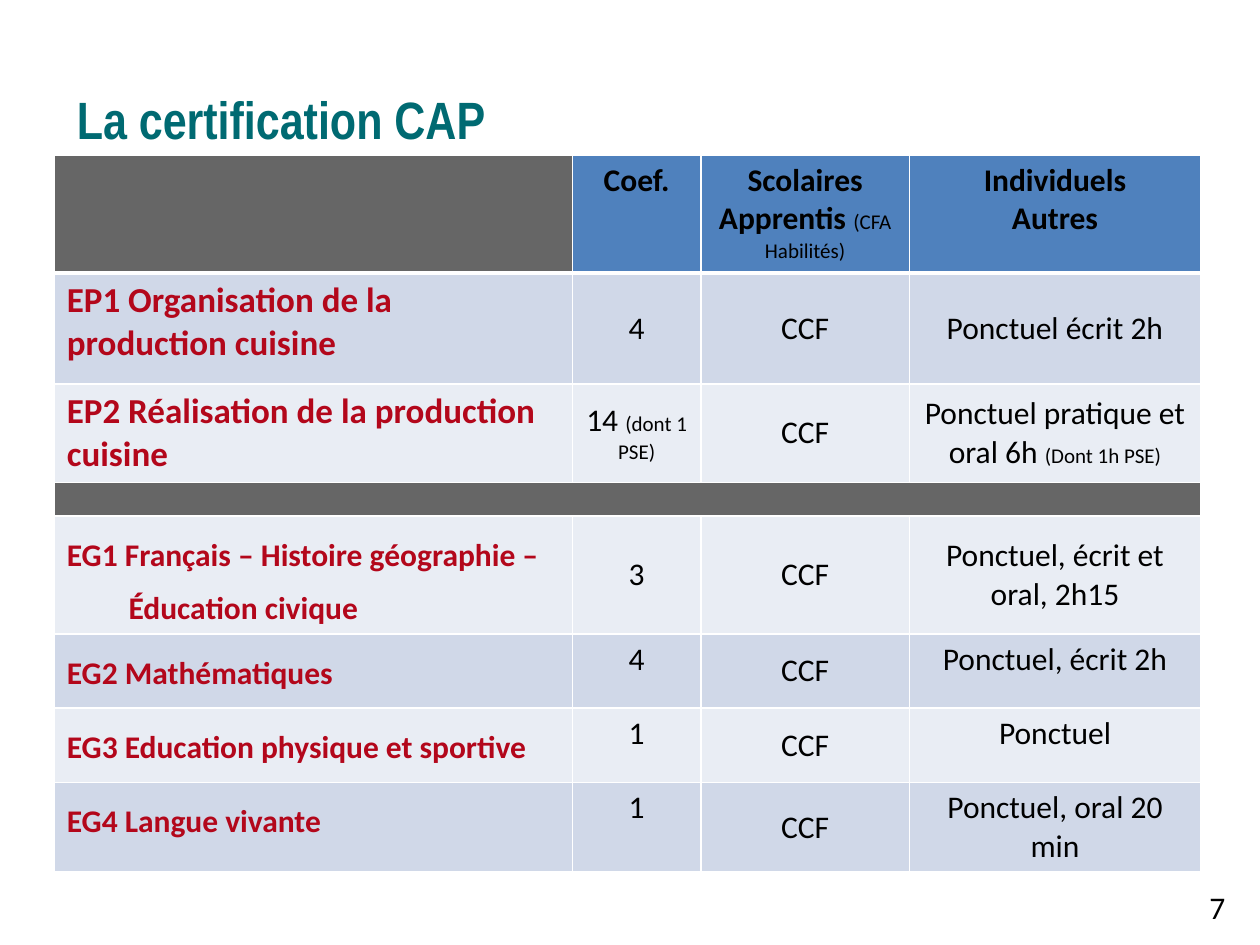
from pptx import Presentation
from pptx.dml.color import RGBColor
from pptx.enum.text import MSO_ANCHOR, MSO_AUTO_SIZE, PP_ALIGN
from pptx.util import Pt
from lxml import etree

LEFT, CENTER = PP_ALIGN.LEFT, PP_ALIGN.CENTER
TOP, MIDDLE = MSO_ANCHOR.TOP, MSO_ANCHOR.MIDDLE
NO_FIT = MSO_AUTO_SIZE.NONE
NS = "http://schemas.openxmlformats.org/drawingml/2006/main"
RED, BLACK, GREY, BLUE = "B3071B", "000000", "666666", "4F81BD"
BANDS = ["E9EDF4", "D0D8E8"]


def style(font, size, color, bold=False, name="Calibri"):
    font.name, font.size, font.bold = name, Pt(size), bold
    font.color.rgb = RGBColor.from_string(color)


def edge(cell, side, width):
    line = etree.SubElement(cell._tc.get_or_add_tcPr(), f"{{{NS}}}ln{side}", w=str(Pt(width)))
    fill = etree.SubElement(line, f"{{{NS}}}solidFill")
    etree.SubElement(fill, f"{{{NS}}}srgbClr", val="FFFFFF")


deck = Presentation()
deck.slide_width, deck.slide_height = Pt(720), Pt(540)
slide = deck.slides.add_slide(deck.slide_layouts[5])

# Title
title = slide.shapes.title
title.left, title.top, title.width, title.height = Pt(36.7), Pt(43.2), Pt(648), Pt(51.8)
frame = title.text_frame
frame.text = "La certification CAP"
frame.auto_size, frame.word_wrap = NO_FIT, True
frame.vertical_anchor = MIDDLE
frame.margin_left = frame.margin_right = Pt(7.2)
frame.margin_top = frame.margin_bottom = 0
para = frame.paragraphs[0]
para.alignment, para.line_spacing = LEFT, Pt(33)
style(para.font, 30, "006A72", True, "Arial Narrow")

# Exam table: a new line starts a paragraph, "|" starts small print
rows = [
    ["", "Coef.", "Scolaires\nApprentis |(CFA Habilités)", "Individuels\nAutres"],
    ["EP1 Organisation de la production cuisine", "4", "CCF", "Ponctuel écrit 2h"],
    ["EP2 Réalisation de la production cuisine", "14 |(dont 1 PSE)", "CCF",
     "Ponctuel pratique et oral 6h |(Dont 1h PSE)"],
    ["", "", "", ""],
    ["EG1 Français – Histoire géographie – Éducation civique", "3", "CCF",
     "Ponctuel, écrit et oral, 2h15"],
    ["EG2 Mathématiques", "4", "CCF", "Ponctuel, écrit 2h"],
    ["EG3 Education physique et sportive", "1", "CCF", "Ponctuel"],
    ["EG4 Langue vivante", "1", "CCF", "Ponctuel, oral 20 min"],
]
widths = [296, 73.6, 119, 166.6]
heights = [67.4, 63.4, 56.2, 19.4, 60.5, 42.5, 42.5, 42.5]
table = slide.shapes.add_table(len(rows), len(widths), Pt(31), Pt(88.6),
                               Pt(sum(widths)), Pt(sum(heights))).table
for col, width in zip(table.columns, widths):
    col.width = Pt(width)
for row, height in zip(table.rows, heights):
    row.height = Pt(height)

for r, texts in enumerate(rows):
    for c, text in enumerate(texts):
        cell = table.cell(r, c)
        for side in "LRTB":
            edge(cell, side, 3 if r == 0 and side == "B" else 1)
        if r == 3 or r == c == 0:
            color = GREY
        else:
            color = BLUE if r == 0 else BANDS[r % 2]
        cell.fill.solid()
        cell.fill.fore_color.rgb = RGBColor.from_string(color)

        # Marks sit at the top in the last three rows, but for the CCF column
        centred = r > 0 and c > 0 and (r < 5 or c == 2)
        cell.vertical_anchor = MIDDLE if centred else TOP
        if not text:
            cell.margin_top = cell.margin_bottom = 0
            end = etree.SubElement(cell.text_frame.paragraphs[0]._p, f"{{{NS}}}endParaRPr")
            end.set("sz", "800")
            continue

        cell.text = text.replace("|", "")
        for para, words in zip(cell.text_frame.paragraphs, text.split("\n")):
            para.alignment = CENTER if c else LEFT
            main, _, small = words.partition("|")
            size = 20 if c == 0 and r < 3 else 18
            bold = r == 0 or c == 0
            if small:
                run = para.runs[0]
                run.text = main
                style(run.font, size, BLACK, bold)
                run = para.add_run()
                run.text = small
                style(run.font, 12, BLACK)
            else:
                style(para.font, size, BLACK if c else RED, bold)
            if c == 0 and r > 3:
                para.line_spacing = Pt(30)
                hang = Pt(35.3 if r == 4 else 27.4)
                props = para._p.get_or_add_pPr()
                props.set("marL", str(hang))
                props.set("indent", str(-hang))
table.cell(3, 0).merge(table.cell(3, 3))

# Page number
box = slide.shapes.add_textbox(Pt(684), Pt(504), Pt(26.6), Pt(14.4))
box.text_frame.word_wrap = True
box.text_frame.text = "7"
style(box.text_frame.paragraphs[0].font, 18, BLACK)

deck.save("out.pptx")
